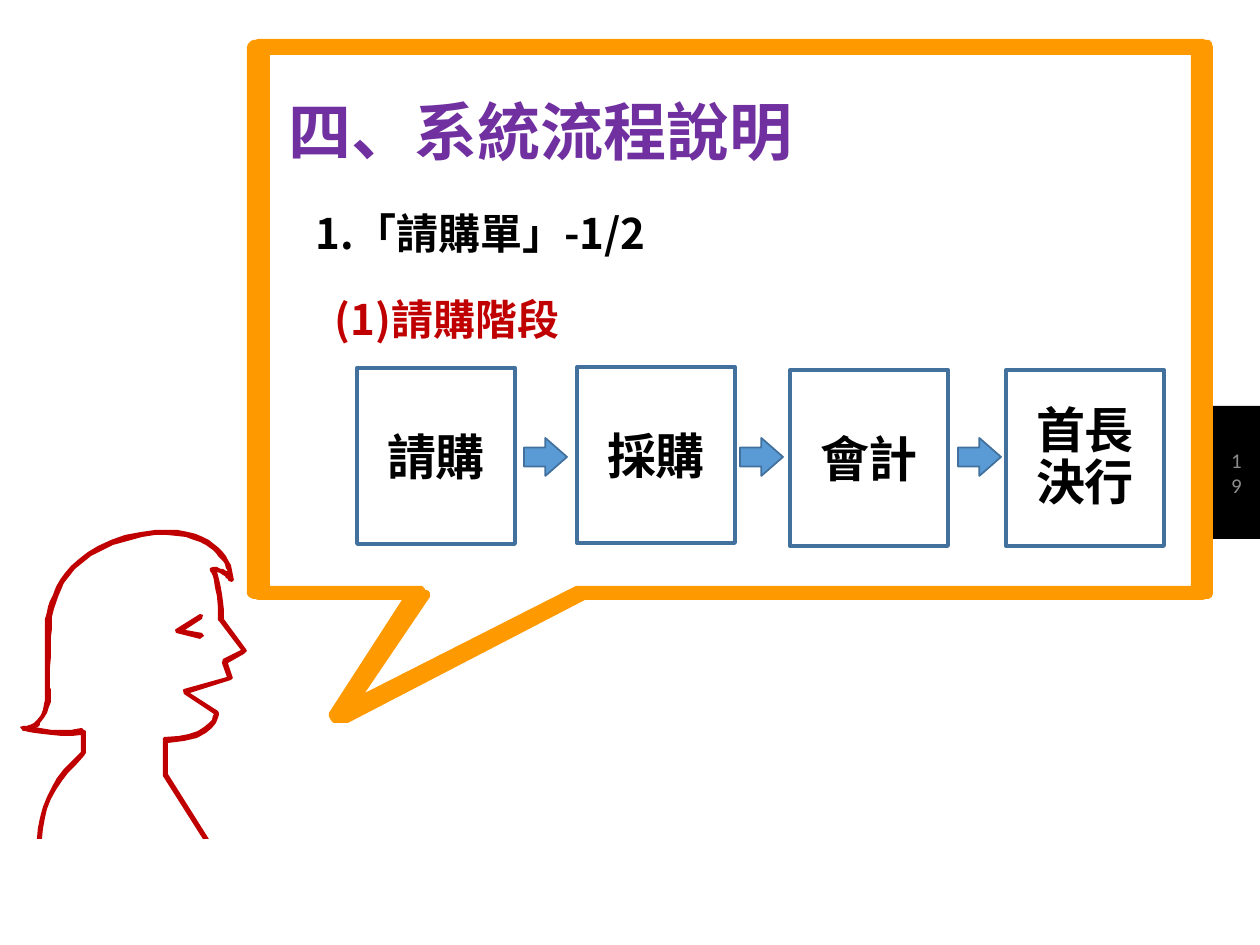
from pptx import Presentation
from pptx.dml.color import RGBColor
from pptx.enum.shapes import MSO_SHAPE as Shape
from pptx.enum.text import MSO_ANCHOR as Anchor, MSO_AUTO_SIZE as AutoSize, PP_ALIGN as Align
from pptx.util import Emu, Pt

PX = 914400 // 126
CJK = "Noto Sans CJK SC"
ORANGE, RED, BLUE, BORDER = "FF9900", "C00000", "5B9BD5", "41719C"

TITLE = "四、系統流程說明"
HEADINGS = [("1.「請購單」-1/2", "000000", 28), ("(1)請購階段", RED, 47)]
STEPS = [("請購", 357, 368), ("採購", 577, 367), ("會計", 790, 370), ("首長決行", 1006, 370)]
STEP_SIZE = (158, 176)
ARROW_LEFTS = [524, 740, 958]

# Outline points: a pair is a straight line, six numbers are a Bézier curve.
EYE = [[(176, 629), (200, 614), (203, 615), (202, 619), (185, 630), (202, 633),
        (204, 636), (200, 639), (176, 633), (175, 630)]]
HEAD = [[
    (218, 711), (219, 713), (219, 714, 217, 742, 168, 743), (168, 774), (209, 839),
    (203, 839), (163, 776), (163, 741), (163, 738, 164, 737, 165, 737),
    (205, 737, 213, 719, 214, 714), (184, 694), (183, 690), (184, 689), (227, 677),
    (222, 663), (223, 659), (241, 650), (219, 621), (218, 620),
    (218, 581, 210, 570, 210, 570), (210, 568), (213, 567),
    (219, 567, 224, 570, 228, 571), (224, 562, 218, 554, 210, 548),
    (200, 541, 179, 530, 142, 537), (55, 551, 52, 619, 52, 620),
    (52, 625, 50, 663, 50, 688), (52, 689, 53, 712, 40, 723),
    (40, 726, 38, 727, 35, 727), (48, 730, 68, 732, 82, 728), (84, 730), (86, 731),
    (86, 753), (84, 756), (76, 765), (54, 785, 43, 811, 42, 839), (37, 839),
    (38, 810, 50, 782, 72, 761), (81, 752), (81, 735), (57, 738, 24, 731, 23, 731),
    (20, 727), (23, 726), (28, 726, 33, 725, 38, 719), (47, 709, 45, 688, 45, 688),
    (45, 620), (45, 619, 48, 600, 60, 580), (72, 562, 95, 539, 141, 532),
    (180, 525, 202, 534, 214, 544), (227, 553, 233, 566, 234, 580), (232, 582),
    (229, 581), (229, 581, 226, 575, 217, 572), (219, 580, 224, 592, 224, 619),
    (246, 649), (247, 651), (244, 654), (228, 663), (233, 678), (231, 680), (190, 693),
]]
BUBBLE = [
    [(261, 39), (1200, 39), (1210, 39, 1213, 42, 1213, 49), (1213, 593),
     (1213, 597, 1210, 600, 1200, 600), (585, 600), (348, 723), (334, 723),
     (329, 719, 329, 717, 329, 713), (402, 600), (261, 600),
     (252, 600, 247, 597, 247, 593), (247, 49), (247, 42, 252, 39, 261, 39)],
    [(270, 586), (416, 586), (421, 586, 425, 586, 425, 590),
     (430, 590, 430, 593, 430, 597), (365, 693), (576, 586), (1191, 586),
     (1191, 55), (270, 55)],
]


def px(*lengths):
    """Turn pixel lengths into EMU."""
    return [Emu(length * PX) for length in lengths]


def color(value):
    """Turn a hex string into a colour."""
    return RGBColor.from_string(value)


def paint(shape, fill, line=None, width=1):
    """Set a flat fill and an optional line."""
    shape.shadow.inherit = False
    shape.fill.solid()
    shape.fill.fore_color.rgb = color(fill)
    if line:
        shape.line.color.rgb = color(line)
        shape.line.width = Pt(width)
    else:
        shape.line.fill.background()


def write(paragraph, text, size, ink, font="Calibri", bold=True, align=Align.LEFT,
          spacing=None, before=0, indent=0):
    """Put one formatted run into a paragraph."""
    paragraph.alignment = align
    paragraph.space_before = Pt(before)
    if spacing:
        paragraph.line_spacing = spacing
    properties = paragraph._p.get_or_add_pPr()
    properties.set("marL", str(indent * PX))
    properties.set("indent", "0")
    run = paragraph.add_run()
    run.text = text
    run.font.size, run.font.bold, run.font.name = Pt(size), bold, font
    run.font.color.rgb = color(ink)


def setup(frame, anchor, margin=13):
    """Make a text frame wrap, with equal margins and a fixed size."""
    frame.word_wrap, frame.auto_size, frame.vertical_anchor = True, AutoSize.NONE, anchor
    frame.margin_left = frame.margin_right = Emu(margin * PX)
    frame.margin_top = frame.margin_bottom = Emu(margin * PX)
    return frame


def flatten(outline, pieces=8):
    """Turn an outline of lines and curves into a list of points."""
    points = []
    for step in outline:
        if len(step) == 2:
            points.append(step)
            continue
        corners = [points[-1], step[:2], step[2:4], step[4:]]
        for t in (piece / pieces for piece in range(1, pieces + 1)):
            weights = ((1 - t) ** 3, 3 * t * (1 - t) ** 2, 3 * t * t * (1 - t), t ** 3)
            points.append(tuple(sum(w * corner[axis] for w, corner in zip(weights, corners))
                                for axis in (0, 1)))
    return points


def draw_outline(shapes, outlines, fill):
    """Draw one filled freeform from closed outlines."""
    first, *others = [flatten(outline) for outline in outlines]
    builder = shapes.build_freeform(*first[0], scale=PX)
    builder.add_line_segments(first[1:])
    for points in others:
        builder.move_to(*points[0])
        builder.add_line_segments(points[1:])
    paint(builder.convert_to_shape(), fill)


def main():
    """Build the slide and save it."""
    presentation = Presentation()
    presentation.slide_width, presentation.slide_height = px(1260, 945)
    slide = presentation.slides.add_slide(presentation.slide_layouts[5])
    shapes = slide.shapes

    tab = shapes.add_shape(Shape.RECTANGLE, *px(1213, 406, 47, 133))
    paint(tab, "000000")
    frame = setup(tab.text_frame, Anchor.MIDDLE)
    write(frame.paragraphs[0], "19", 12, "8C8C8C", bold=False, align=Align.CENTER)

    for outlines, fill in [(EYE, RED), (HEAD, RED), (BUBBLE, ORANGE)]:
        draw_outline(shapes, outlines, fill)

    title = shapes.title
    title.left, title.top, title.width, title.height = px(275, 65, 925, 130)
    frame = setup(title.text_frame, Anchor.MIDDLE)
    write(frame.paragraphs[0], TITLE, 36, "7030A0", font=CJK)

    box = shapes.add_textbox(*px(275, 170, 925, 190))
    frame = setup(box.text_frame, Anchor.TOP)
    for index, (text, ink, indent) in enumerate(HEADINGS):
        paragraph = frame.add_paragraph() if index else frame.paragraphs[0]
        write(paragraph, text, 24, ink, font=CJK, spacing=Pt(43), before=6, indent=indent)

    for text, left, top in STEPS:
        step = shapes.add_shape(Shape.RECTANGLE, *px(left, top, *STEP_SIZE))
        paint(step, "FFFFFF", BORDER, 2.25)
        frame = setup(step.text_frame, Anchor.MIDDLE)
        write(frame.paragraphs[0], text, 28, "000000", align=Align.CENTER,
              spacing=Pt(30) if len(text) > 2 else None)

    for left in ARROW_LEFTS:
        arrow = shapes.add_shape(Shape.RIGHT_ARROW, *px(left, 438, 43, 38))
        arrow.adjustments[1] = 0.57
        paint(arrow, BLUE, BORDER)

    presentation.save("out.pptx")


if __name__ == "__main__":
    main()
